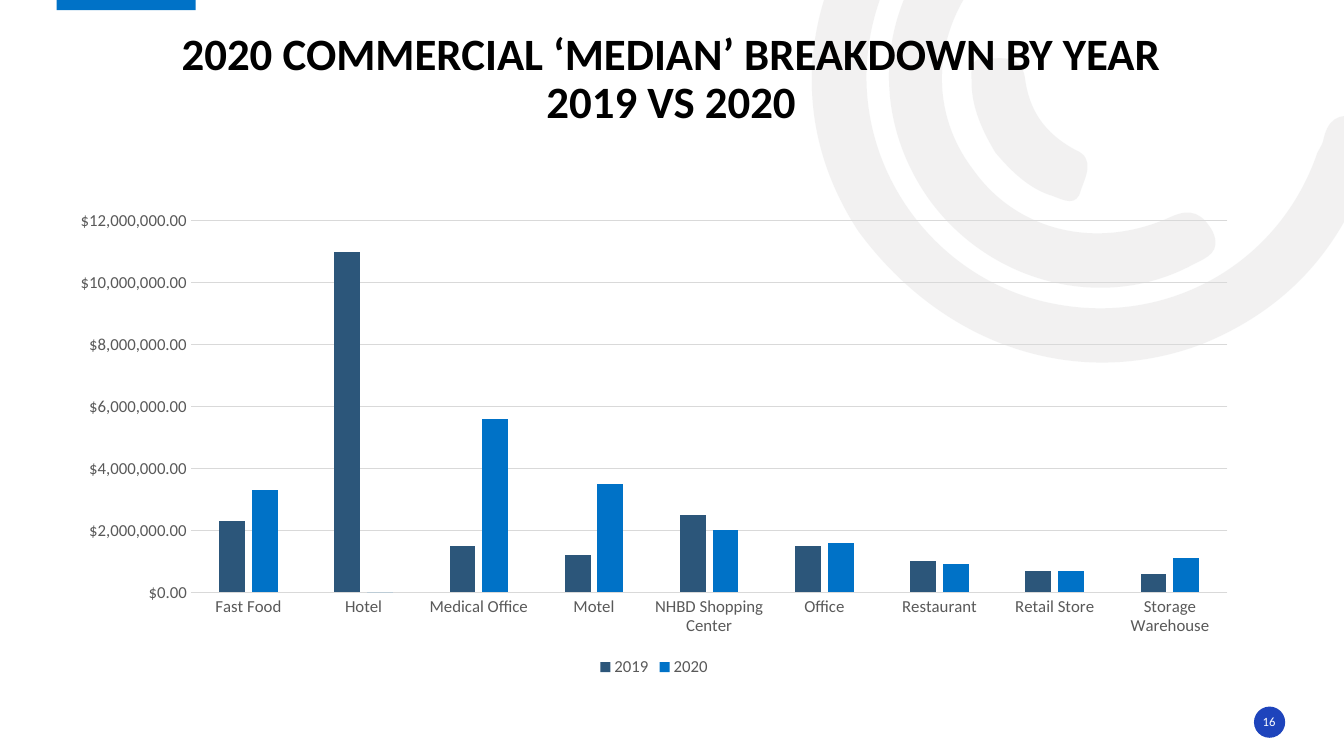
import math
from dataclasses import dataclass

from lxml import etree
from pptx import Presentation
from pptx.chart.axis import CategoryAxis, ValueAxis
from pptx.chart.data import CategoryChartData
from pptx.dml.color import RGBColor
from pptx.enum.chart import XL_CHART_TYPE, XL_LEGEND_POSITION, XL_TICK_MARK
from pptx.enum.shapes import MSO_SHAPE
from pptx.enum.text import MSO_ANCHOR, PP_ALIGN
from pptx.oxml.ns import qn
from pptx.shapes.autoshape import Shape
from pptx.slide import Slide
from pptx.text.text import Font
from pptx.util import Pt

CLUSTERED = XL_CHART_TYPE.COLUMN_CLUSTERED
LEGEND_BOTTOM = XL_LEGEND_POSITION.BOTTOM
NO_TICKS = XL_TICK_MARK.NONE
RECTANGLE, OVAL = MSO_SHAPE.RECTANGLE, MSO_SHAPE.OVAL
CENTER = PP_ALIGN.CENTER
BOTTOM, MIDDLE = MSO_ANCHOR.BOTTOM, MSO_ANCHOR.MIDDLE

Point = tuple[float, float]


@dataclass(frozen=True)
class Theme:
    font: str = "Calibri"
    title_size: int = 32
    chart_size: int = 12
    number_size: int = 9
    black: str = "000000"
    white: str = "FFFFFF"
    label: str = "595959"
    grid: str = "D9D9D9"
    ring: str = "E7E6E6"
    ring_opacity: int = 53
    navy: str = "2C567A"
    blue: str = "0072C7"
    badge: str = "1E44BC"


@dataclass(frozen=True)
class Box:
    left: float
    top: float
    width: float
    height: float

    def lengths(self) -> tuple[Pt, Pt, Pt, Pt]:
        return Pt(self.left), Pt(self.top), Pt(self.width), Pt(self.height)


@dataclass(frozen=True)
class Accent:
    preset: MSO_SHAPE
    box: Box
    color: str
    rotation: float = 0


@dataclass(frozen=True)
class Label:
    text: str
    box: Box
    size: int
    color: str
    anchor: MSO_ANCHOR
    bold: bool = False
    line_spacing: float = 1.0


@dataclass(frozen=True)
class Series:
    name: str
    values: tuple[int, ...]
    color: str


THEME = Theme()

# Each ring is a start point followed by triples of Bézier points
RINGS: list[list[Point]] = [
    [(613, 165),
     (575, 107), (567, 36), (603, -36), (641, -109), (703, -146), (785, -149),
     (796, -149), (807, -151), (814, -140), (824, -126), (811, -111), (791, -111),
     (696, -111), (623, -42), (619, 49), (616, 130), (674, 202), (753, 217),
     (835, 233), (914, 188), (941, 109), (942, 107), (944, 104), (945, 101),
     (948, 86), (955, 80), (971, 84), (989, 89), (984, 102), (980, 112),
     (960, 176), (920, 221), (858, 246), (770, 279), (674, 248), (613, 165)],
    [(664, 143),
     (621, 83), (626, 5), (677, -49), (685, -57), (693, -68), (706, -56),
     (716, -46), (718, -36), (705, -23), (666, 19), (662, 78), (695, 121),
     (726, 165), (783, 179), (836, 155), (851, 148), (859, 153), (866, 165),
     (873, 180), (862, 184), (852, 189), (789, 223), (708, 203), (664, 143)],
    [(711, 109),
     (702, 94), (694, 77), (694, 59), (694, 53), (692, 41), (703, 42),
     (714, 42), (729, 38), (732, 55), (735, 79), (746, 95), (768, 107),
     (783, 113), (775, 127), (772, 136), (769, 148), (760, 143), (752, 140),
     (735, 135), (722, 122), (711, 109)],
]
RING_ROTATION = 144.2

ACCENTS = [
    Accent(RECTANGLE, Box(40.5, -1.4, 99.3, 8.6), THEME.blue, 180),
    Accent(OVAL, Box(895.7, 504.7, 22.3, 22.3), THEME.badge),
]
LABELS = [
    Label("16", Box(895, 508.3, 23, 14.4), THEME.number_size, THEME.white, MIDDLE),
    Label("2020 COMMERCIAL ‘MEDIAN’ BREAKDOWN BY YEAR\v2019 VS 2020",
          Box(40.5, 19.2, 878, 72.7), THEME.title_size, THEME.black, BOTTOM, True, 0.9),
]

CHART_BOX = Box(40.5, 143.8, 853.4, 342.7)
CATEGORIES = ["Fast Food", "Hotel", "Medical Office", "Motel", "NHBD Shopping Center",
              "Office", "Restaurant", "Retail Store", "Storage Warehouse"]
SERIES = [
    Series("2019", (2300000, 11000000, 1500000, 1200000, 2500000,
                    1500000, 1000000, 700000, 600000), THEME.navy),
    Series("2020", (3300000, 0, 5600000, 3500000, 2000000,
                    1600000, 900000, 700000, 1100000), THEME.blue),
]


def rgb(color: str) -> RGBColor:
    return RGBColor.from_string(color)


def style_font(font: Font, size: int, color: str, bold: bool = False) -> None:
    font.name, font.size, font.bold = THEME.font, Pt(size), bold
    font.color.rgb = rgb(color)


def style_shape(shape: Shape, color: str, rotation: float) -> None:
    shape.shadow.inherit = False
    shape.rotation = rotation
    shape.fill.solid()
    shape.fill.fore_color.rgb = rgb(color)
    shape.line.fill.background()


def turn(point: Point, degrees: float) -> Point:
    """Rotate a point clockwise about the slide's top left corner."""
    x, y = point
    cosine, sine = math.cos(math.radians(degrees)), math.sin(math.radians(degrees))
    return x * cosine - y * sine, x * sine + y * cosine


def add_ring(slide: Slide, ring: list[Point]) -> None:
    # Outline turned back, so that the shape's rotation restores it
    upright = [turn(point, -RING_ROTATION) for point in ring]
    start, *rest = [(Pt(x), Pt(y)) for x, y in upright]
    builder = slide.shapes.build_freeform(*start, scale=1.0)
    builder.add_line_segments(rest, close=True)
    shape = builder.convert_to_shape()
    center = (shape.left + shape.width / 2, shape.top + shape.height / 2)
    x, y = turn(center, RING_ROTATION)
    shape.left, shape.top = int(x - shape.width / 2), int(y - shape.height / 2)

    # Every three corners become one curve
    outline = shape._element.spPr.find(".//" + qn("a:path"))
    corners = outline.findall(qn("a:lnTo"))
    for i in range(0, len(rest), 3):
        curve = etree.Element(qn("a:cubicBezTo"))
        corners[i].addprevious(curve)
        for corner in corners[i:i + 3]:
            curve.append(corner[0])
            outline.remove(corner)

    style_shape(shape, THEME.ring, RING_ROTATION)
    color = shape._element.spPr.find(qn("a:solidFill"))[0]
    etree.SubElement(color, qn("a:alpha"), val=str(THEME.ring_opacity * 1000))


def add_accent(slide: Slide, accent: Accent) -> None:
    shape = slide.shapes.add_shape(accent.preset, *accent.box.lengths())
    style_shape(shape, accent.color, accent.rotation)


def add_label(slide: Slide, label: Label) -> None:
    frame = slide.shapes.add_textbox(*label.box.lengths()).text_frame
    frame.word_wrap = True
    frame.vertical_anchor = label.anchor
    frame.margin_left = frame.margin_right = frame.margin_top = frame.margin_bottom = Pt(0)
    paragraph = frame.paragraphs[0]
    paragraph.text = label.text
    paragraph.alignment = CENTER
    paragraph.line_spacing = label.line_spacing
    style_font(paragraph.font, label.size, label.color, label.bold)


def style_axis(axis: CategoryAxis | ValueAxis) -> None:
    axis.major_tick_mark = axis.minor_tick_mark = NO_TICKS
    style_font(axis.tick_labels.font, THEME.chart_size, THEME.label)


def add_median_chart(slide: Slide) -> None:
    data = CategoryChartData()
    data.categories = CATEGORIES
    for series in SERIES:
        data.add_series(series.name, series.values)
    chart = slide.shapes.add_chart(CLUSTERED, *CHART_BOX.lengths(), data).chart
    chart.has_title = False

    # Columns
    plot = chart.plots[0]
    plot.gap_width, plot.overlap, plot.vary_by_categories = 219, -27, False
    for drawn, series in zip(plot.series, SERIES):
        drawn.format.fill.solid()
        drawn.format.fill.fore_color.rgb = rgb(series.color)

    # Axes and gridlines
    category_axis, value_axis = chart.category_axis, chart.value_axis
    style_axis(category_axis)
    style_axis(value_axis)
    for line in (category_axis.format.line, value_axis.major_gridlines.format.line):
        line.color.rgb, line.width = rgb(THEME.grid), Pt(0.75)
    value_axis.format.line.fill.background()
    value_axis.tick_labels.number_format = '"$"#,##0.00'
    value_axis.tick_labels.number_format_is_linked = False

    # Legend
    chart.has_legend = True
    chart.legend.position = LEGEND_BOTTOM
    chart.legend.include_in_layout = False
    style_font(chart.legend.font, THEME.chart_size, THEME.label)


def main() -> None:
    presentation = Presentation()
    presentation.slide_width, presentation.slide_height = Pt(960), Pt(540)
    slide = presentation.slides.add_slide(presentation.slide_layouts[6])
    for ring in RINGS:
        add_ring(slide, ring)
    for accent in ACCENTS:
        add_accent(slide, accent)
    add_median_chart(slide)
    for label in LABELS:
        add_label(slide, label)
    presentation.save("out.pptx")


if __name__ == "__main__":
    main()
